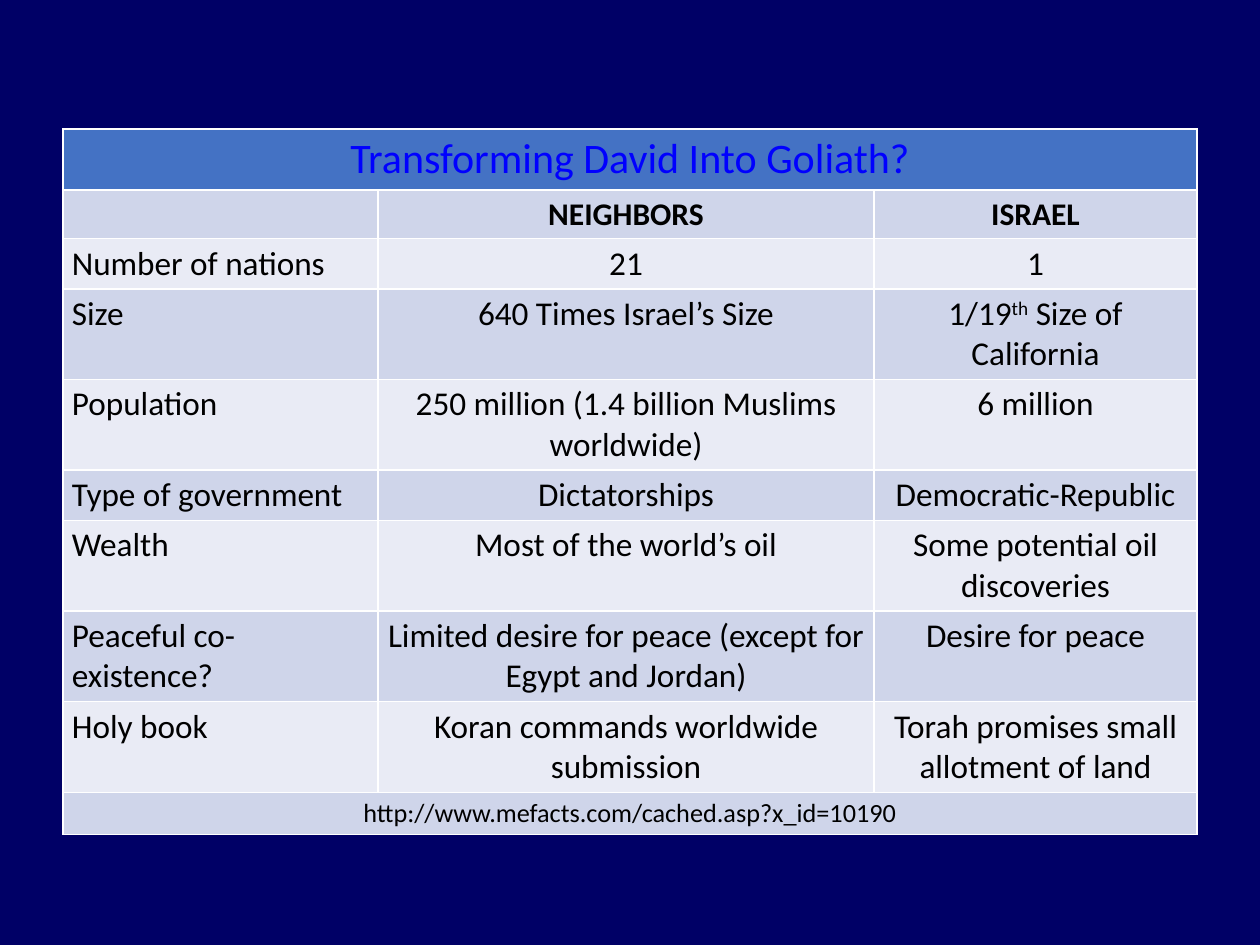
from pptx import Presentation
from pptx.dml.color import RGBColor as RGB
from pptx.enum.text import PP_ALIGN as Align
from pptx.util import Cm, Pt

NAVY = RGB(0x00, 0x00, 0x66)
BLUE = RGB(0x44, 0x72, 0xC4)
LINK = RGB(0x00, 0x00, 0xFF)
BLACK = RGB(0x00, 0x00, 0x00)
BANDS = RGB(0xE9, 0xEB, 0xF5), RGB(0xCF, 0xD5, 0xEA)

ROWS = [
    ["Transforming David Into Goliath?"],
    ["", "NEIGHBORS", "ISRAEL"],
    ["Number of nations", "21", "1"],
    ["Size", "640 Times Israel’s Size", "1/19^th^ Size of California"],
    ["Population", "250 million (1.4 billion Muslims worldwide)", "6 million"],
    ["Type of government", "Dictatorships", "Democratic-Republic"],
    ["Wealth", "Most of the world’s oil", "Some potential oil discoveries"],
    ["Peaceful co-existence?",
     "Limited desire for peace (except for Egypt and Jordan)",
     "Desire for peace"],
    ["Holy book", "Koran commands worldwide submission",
     "Torah promises small allotment of land"],
    ["http://www.mefacts.com/cached.asp?x_id=10190"],
]
WIDTHS = [6.35, 10, 6.51]
HEIGHTS = [1.2, 0.97, 1, 1.79, 1.79, 1, 1.79, 1.79, 1.79, 0.83]
LAST = len(ROWS) - 1

BASE = {"name": "Calibri", "size": Pt(19), "bold": False}
FORMATS = {
    0: {"size": Pt(24)},
    1: {"size": Pt(18), "bold": True},
    LAST: {"size": Pt(15)},
}
INSETS = {"margin_left": Cm(0.18), "margin_right": Cm(0.18),
          "margin_top": Cm(0.1), "margin_bottom": Cm(0.1)}

deck = Presentation()
deck.slide_width, deck.slide_height = Cm(25.4), Cm(19.05)
slide = deck.slides.add_slide(deck.slide_layouts[6])
back = slide.background.fill
back.solid()
back.fore_color.rgb = NAVY

frame = slide.shapes.add_table(len(ROWS), len(WIDTHS), Cm(1.27), Cm(2.6),
                               Cm(sum(WIDTHS)), Cm(sum(HEIGHTS)))
table = frame.table
for col, width in zip(table.columns, WIDTHS):
    col.width = Cm(width)
for row, height in zip(table.rows, HEIGHTS):
    row.height = Cm(height)

for i, texts in enumerate(ROWS):
    if len(texts) == 1:
        table.cell(i, 0).merge(table.cell(i, len(WIDTHS) - 1))
    for j, text in enumerate(texts):
        cell = table.cell(i, j)
        for key, value in INSETS.items():
            setattr(cell, key, value)
        cell.fill.solid()
        cell.fill.fore_color.rgb = BANDS[i % 2] if i else BLUE
        para = cell.text_frame.paragraphs[0]
        label = j == 0 and len(texts) > 1
        para.alignment = Align.LEFT if label else Align.CENTER
        if not text:
            para.font.size = Pt(18)
            continue
        for k, part in enumerate(text.split("^")):
            run = para.add_run()
            run.text = part
            for key, value in (BASE | FORMATS.get(i, {})).items():
                setattr(run.font, key, value)
            run.font.color.rgb = BLACK if i else LINK
            if k % 2:
                run._r.get_or_add_rPr().set("baseline", "30000")

deck.save("out.pptx")
